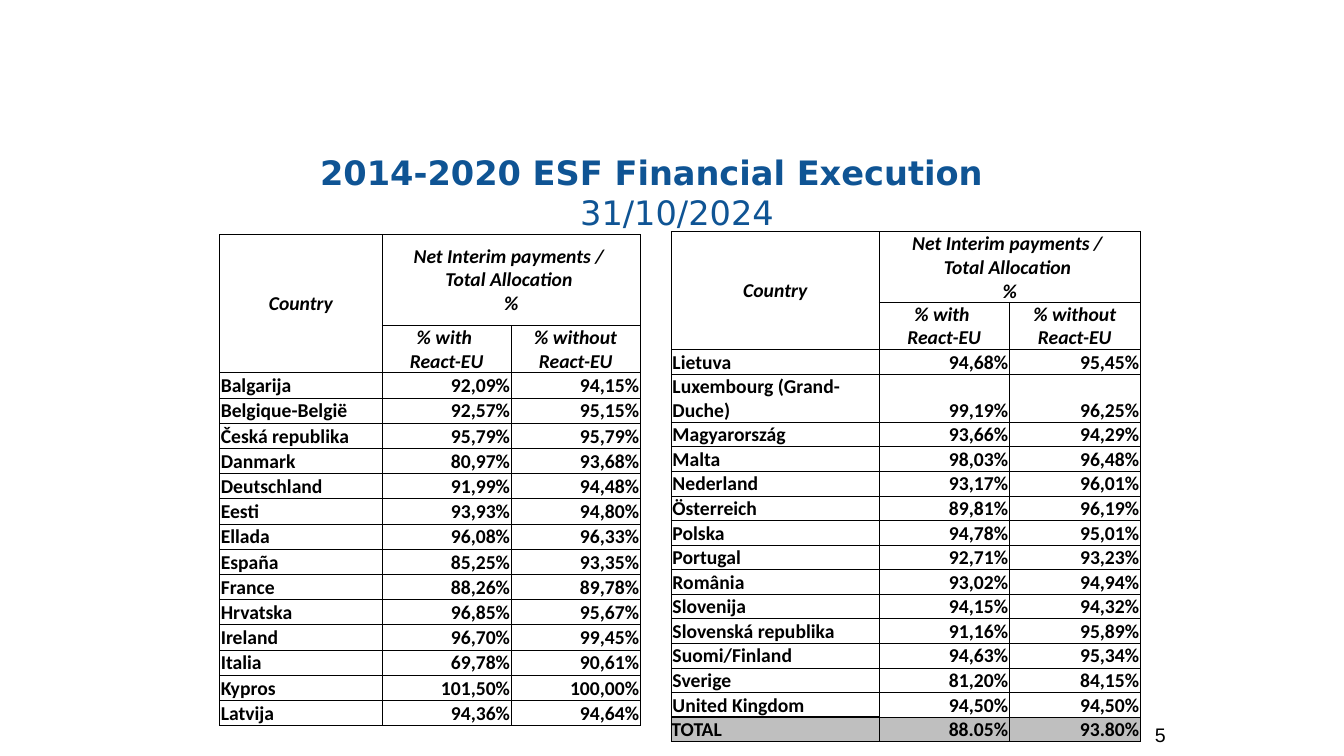
from lxml.etree import SubElement
from pptx import Presentation
from pptx.dml.color import RGBColor
from pptx.enum.text import MSO_ANCHOR, PP_ALIGN
from pptx.oxml.ns import qn
from pptx.util import Inches, Pt

BLUE = RGBColor(0x0F, 0x54, 0x94)
BLACK = RGBColor(0, 0, 0)
GREY = RGBColor(0xBF, 0xBF, 0xBF)
WHITE = RGBColor(0xFF, 0xFF, 0xFF)

# Content
TITLE = ["2014-2020 ESF Financial Execution ", "31/10/2024"]
PAGE = "5"
# Each header cell is a list of paragraphs, each a list of lines
COUNTRY = [["Country"]]
PAYMENTS = [["Net Interim payments / ", "Total Allocation ", "%"]]
WITH_REACT = [["% with "], ["React-EU"]]
WITHOUT_REACT = [["% without"], ["React-EU"]]
HEADER = {(0, 0): COUNTRY, (0, 1): PAYMENTS,
          (1, 1): WITH_REACT, (1, 2): WITHOUT_REACT}
LEFT_ROWS = [
    ("Balgarija", "92,09%", "94,15%"),
    ("Belgique-België", "92,57%", "95,15%"),
    ("Česká republika", "95,79%", "95,79%"),
    ("Danmark", "80,97%", "93,68%"),
    ("Deutschland", "91,99%", "94,48%"),
    ("Eesti", "93,93%", "94,80%"),
    ("Ellada", "96,08%", "96,33%"),
    ("España", "85,25%", "93,35%"),
    ("France", "88,26%", "89,78%"),
    ("Hrvatska", "96,85%", "95,67%"),
    ("Ireland", "96,70%", "99,45%"),
    ("Italia", "69,78%", "90,61%"),
    ("Kypros", "101,50%", "100,00%"),
    ("Latvija", "94,36%", "94,64%"),
]
RIGHT_ROWS = [
    ("Lietuva", "94,68%", "95,45%"),
    ("Luxembourg (Grand-Duche)", "99,19%", "96,25%"),
    ("Magyarország", "93,66%", "94,29%"),
    ("Malta", "98,03%", "96,48%"),
    ("Nederland", "93,17%", "96,01%"),
    ("Österreich", "89,81%", "96,19%"),
    ("Polska", "94,78%", "95,01%"),
    ("Portugal", "92,71%", "93,23%"),
    ("România", "93,02%", "94,94%"),
    ("Slovenija", "94,15%", "94,32%"),
    ("Slovenská republika", "91,16%", "95,89%"),
    ("Suomi/Finland", "94,63%", "95,34%"),
    ("Sverige", "81,20%", "84,15%"),
    ("United Kingdom", "94,50%", "94,50%"),
    ("TOTAL", "88.05%", "93.80%"),
]
# Sides drawn at 1 pt instead of 0.5 pt, by (row, column)
LEFT_HEAVY = {(0, 0): "LT", (0, 1): "T", (0, 2): "T", (1, 0): "L"}
RIGHT_HEAVY = {(0, 0): "LTB", (0, 1): "TB", (0, 2): "TB", (1, 0): "LB",
               (1, 1): "TB", (1, 2): "TB", (2, 0): "T", (2, 1): "T",
               (2, 2): "T", (15, 0): "B", (16, 0): "LTB"}
LEFT_FILLS = {}
RIGHT_FILLS = {"Luxembourg (Grand-Duche)": WHITE, "TOTAL": GREY}
# Left, top, column widths, header heights, row height, content
TABLES = [
    (2.18, 2.33, [1.61, 1.28, 1.28], [0.9, 0.44], 0.25,
     LEFT_ROWS, LEFT_HEAVY, LEFT_FILLS),
    (6.66, 2.3, [2.06, 1.29, 1.3], [0.58, 0.44], 0.23,
     RIGHT_ROWS, RIGHT_HEAVY, RIGHT_FILLS),
]


def add_run(p, text, font, size, color, bold=False, italic=False):
    r = p.add_run()
    r.text = text
    f = r.font
    f.name, f.size, f.bold, f.italic = font, Pt(size), bold, italic
    f.color.rgb = color


def add_box(s, left, top, width, height):
    tf = s.shapes.add_textbox(*map(Inches, (left, top, width, height))).text_frame
    tf.word_wrap = True
    return tf


def set_borders(cell, heavy):
    tc_pr = cell._tc.get_or_add_tcPr()
    for side in "LRTB":
        width = Pt(1 if side in heavy else 0.5)
        ln = SubElement(tc_pr, qn(f"a:ln{side}"), w=str(width))
        fill = SubElement(ln, qn("a:solidFill"))
        SubElement(fill, qn("a:srgbClr"), val=str(BLACK))


def write_cell(cell, paragraphs, align, anchor, inset, italic):
    cell.vertical_anchor = anchor
    cell.margin_left = cell.margin_right = cell.margin_top = Inches(inset)
    cell.margin_bottom = 0
    tf = cell.text_frame
    for i, lines in enumerate(paragraphs):
        p = tf.add_paragraph() if i else tf.paragraphs[0]
        p.alignment = align
        for j, line in enumerate(lines):
            if j:
                p.add_line_break()
            add_run(p, line, "Calibri", 14, BLACK, True, italic)


def add_payments_table(s, left, top, cols, head, row_height, rows, heavy, fills):
    heights = head + [row_height] * len(rows)
    table = s.shapes.add_table(
        len(heights), len(cols), Inches(left), Inches(top),
        Inches(sum(cols)), Inches(sum(heights))).table
    table.first_row = table.horz_banding = False
    for col, width in zip(table.columns, cols):
        col.width = Inches(width)
    for row, height in zip(table.rows, heights):
        row.height = Inches(height)
    for i in range(len(heights)):
        for j in range(len(cols)):
            cell = table.cell(i, j)
            set_borders(cell, heavy.get((i, j), ""))
            cell.fill.background()
    # Header
    table.cell(0, 0).merge(table.cell(1, 0))
    table.cell(0, 1).merge(table.cell(0, 2))
    for (i, j), paragraphs in HEADER.items():
        write_cell(table.cell(i, j), paragraphs, PP_ALIGN.CENTER,
                   MSO_ANCHOR.MIDDLE, 0, True)
    # Countries
    for i, row in enumerate(rows, len(head)):
        for j, text in enumerate(row):
            cell = table.cell(i, j)
            inset = 0 if text == "TOTAL" else 0.01
            write_cell(cell, [[text]], PP_ALIGN.RIGHT if j else PP_ALIGN.LEFT,
                       MSO_ANCHOR.BOTTOM, inset, False)
            if row[0] in fills:
                cell.fill.solid()
                cell.fill.fore_color.rgb = fills[row[0]]


def main():
    prs = Presentation()
    prs.slide_width, prs.slide_height = Inches(13.33), Inches(7.5)
    s = prs.slides.add_slide(prs.slide_layouts[6])

    # Title, with a hanging indent
    tf = add_box(s, 2.02, 1.47, 9, 0.87)
    tf.vertical_anchor = MSO_ANCHOR.MIDDLE
    p = tf.paragraphs[0]
    p.alignment = PP_ALIGN.CENTER
    p_pr = p._p.get_or_add_pPr()
    p_pr.set("marL", str(Inches(0.39)))
    p_pr.set("indent", str(Inches(-0.39)))
    add_run(p, TITLE[0], "DejaVu Sans", 24, BLUE, bold=True)
    p.add_line_break()
    add_run(p, TITLE[1], "DejaVu Sans", 24, BLUE)

    # Tables
    for spec_row in TABLES:
        add_payments_table(s, *spec_row)

    # Page number
    p = add_box(s, 9.33, 7.12, 2.33, 0.52).paragraphs[0]
    p.alignment = PP_ALIGN.RIGHT
    add_run(p, PAGE, "Arial", 14, BLACK)

    prs.save("out.pptx")


if __name__ == "__main__":
    main()
